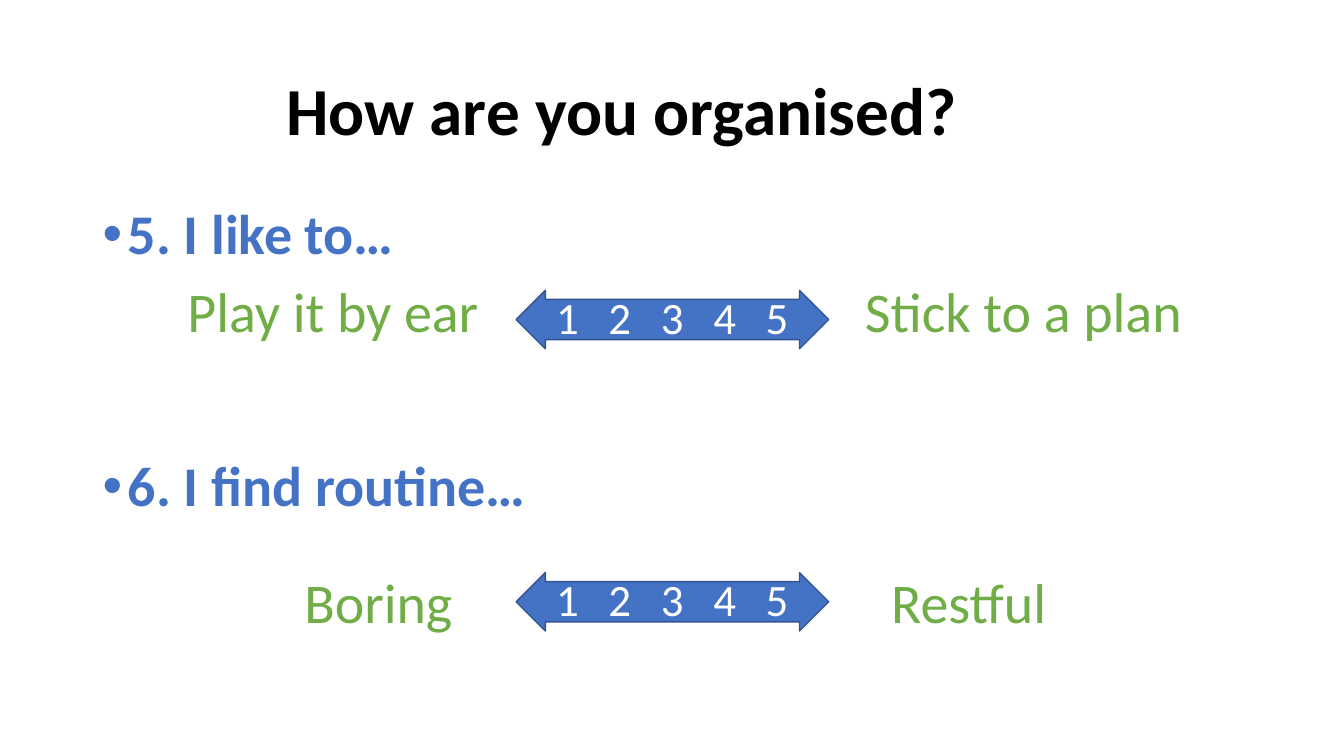
import pptx
import pptx.util
import pptx.dml.color
import pptx.enum.shapes
import pptx.enum.text
import pptx.oxml.ns
import lxml.etree

Inches = pptx.util.Inches
Pt = pptx.util.Pt
hues = {"black": "000000", "blue": "4472C4", "edge": "325491",
        "green": "70AD47", "white": "FFFFFF"}


def tint(name):
    return pptx.dml.color.RGBColor.from_string(hues[name])


def write(text, box, size=40, hue="green", bold=False, align="LEFT",
          anchor="TOP", line=1.0, bullet=False, track=0):
    frame = box.text_frame
    frame.word_wrap = True
    frame.vertical_anchor = getattr(pptx.enum.text.MSO_ANCHOR, anchor)
    para = frame.paragraphs[0]
    para.alignment = getattr(pptx.enum.text.PP_ALIGN, align)
    para.line_spacing = line
    if bullet:
        props = para._p.get_or_add_pPr()
        props.set("marL", str(Inches(0.25)))
        props.set("indent", str(Inches(-0.25)))
        for tag, key, value in (("a:buFont", "typeface", "Arial"),
                                ("a:buChar", "char", "•")):
            mark = lxml.etree.SubElement(props, pptx.oxml.ns.qn(tag))
            mark.set(key, value)
    run = para.add_run()
    run.text = text
    run.font.name = "Calibri"
    run.font.size = Pt(size)
    run.font.bold = bold
    run.font.color.rgb = tint(hue)
    if track:
        run.font._element.set("spc", str(track))


deck = pptx.Presentation()
deck.slide_width = Inches(13.33)
deck.slide_height = Inches(7.5)
slide = deck.slides.add_slide(deck.slide_layouts[6])
shapes = slide.shapes

title = shapes.add_textbox(Inches(2.74), Inches(0.4), Inches(9.68), Inches(1.45))
write("How are you organised?", title, size=48, hue="black", bold=True,
      anchor="MIDDLE", line=0.9)

items = [
    ("5. I like to…", 2, 2.88, 2.69, ("Play it by ear", 1.76), ("Stick to a plan", 8.48)),
    ("6. I find routine…", 4.5, 5.68, 5.58, ("Boring", 2.92), ("Restful", 8.74)),
]
for head, top, mid, low, *ends in items:
    box = shapes.add_textbox(Inches(0.92), Inches(top), Inches(12.28), Inches(0.7))
    write(head, box, hue="blue", bold=True, line=0.9, bullet=True)

    scale = shapes.add_shape(pptx.enum.shapes.MSO_SHAPE.LEFT_RIGHT_ARROW,
                             Inches(5.12), Inches(mid), Inches(3.1), Inches(0.58))
    scale.adjustments[0] = 0.69
    scale.adjustments[1] = 0.5
    scale.shadow.inherit = False
    scale.fill.solid()
    scale.fill.fore_color.rgb = tint("blue")
    scale.line.color.rgb = tint("edge")
    scale.line.width = Pt(1)
    scale.text_frame.margin_top = 0
    scale.text_frame.margin_bottom = Inches(0.06)
    write("1 2 3 4 5", scale, size=32, hue="white", align="CENTER",
          anchor="MIDDLE", track=700)

    for text, left in ends:
        box = shapes.add_textbox(Inches(left), Inches(low), Inches(3.55), Inches(0.77))
        write(text, box)

deck.save("out.pptx")
